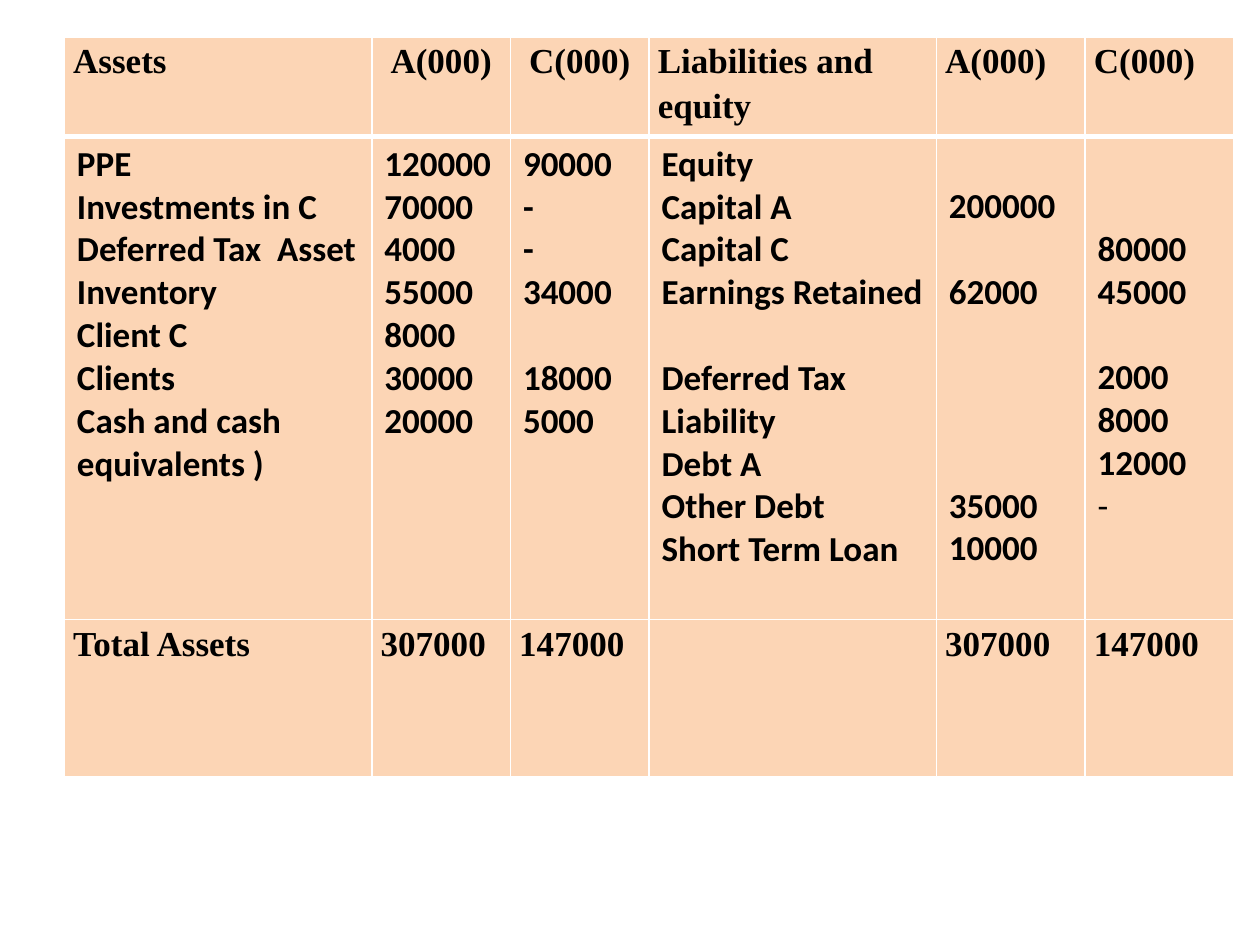
"""Build the balance sheet slide for companies A and C."""
from dataclasses import dataclass

from lxml.etree import SubElement
from pptx import Presentation
from pptx.dml.color import RGBColor
from pptx.enum.text import PP_ALIGN
from pptx.oxml.ns import qn
from pptx.table import _Cell
from pptx.util import Pt


@dataclass(frozen=True)
class Theme:
    """Colours, fonts and sizes in points."""
    fill: str = "FCD5B5"
    ink: str = "000000"
    rule: str = "FFFFFF"
    heading_font: str = "Times New Roman"
    body_font: str = "Calibri"
    size: float = 20
    body_line: float = 24.4
    thin: float = 1
    thick: float = 3


@dataclass(frozen=True)
class RowStyle:
    """Look of one table row, with lengths in points."""
    font: str
    height: float
    side_margin: float
    top_margin: float
    line_spacing: float
    top_rule: float
    bottom_rule: float


@dataclass(frozen=True)
class Entry:
    """Lines of one cell, where an empty line stands for a gap."""
    lines: tuple[str, ...] = ()
    align: PP_ALIGN = PP_ALIGN.LEFT


THEME = Theme()
HEADER = RowStyle(THEME.heading_font, 57, 5.04, 0, 1.15, THEME.thin, THEME.thick)
BODY = RowStyle(THEME.body_font, 276, 7.2, 3.6, 1, THEME.thick, THEME.thin)
TOTAL = RowStyle(THEME.heading_font, 90, 5.04, 0, 1.15, THEME.thin, THEME.thin)

LEFT, TOP = 36.8, 21
COLUMN_WIDTHS = (175.7, 79.2, 79.2, 164.2, 85, 85)
CENTER = PP_ALIGN.CENTER

ROWS = (
    (HEADER, (
        Entry(("Assets",)),
        Entry(("A(000)",), CENTER),
        Entry(("C(000)",), CENTER),
        Entry(("Liabilities and equity",)),
        Entry(("A(000)",)),
        Entry(("C(000)",)),
    )),
    (BODY, (
        Entry(("PPE", "Investments in C", "Deferred Tax  Asset", "Inventory",
               "Client C", "Clients", "Cash and cash equivalents )")),
        Entry(("120000", "70000", "4000", "55000", "8000", "30000", "20000")),
        Entry(("90000", "-", "-", "34000", "", "18000", "5000")),
        Entry(("Equity", "Capital A", "Capital C", "Earnings Retained", "",
               "Deferred Tax Liability", "Debt A", "Other Debt", "Short Term Loan")),
        Entry(("", "200000", "", "62000", "", "", "", "", "35000", "10000")),
        Entry(("", "", "80000", "45000", "", "2000", "8000", "12000", "-")),
    )),
    (TOTAL, (
        Entry(("Total Assets",)),
        Entry(("307000",)),
        Entry(("147000",)),
        Entry(),
        Entry(("307000",)),
        Entry(("147000",)),
    )),
)


def apply_format(target: object, values: dict[str, object]) -> None:
    """Set each named attribute on the target."""
    for name, value in values.items():
        setattr(target, name, value)


def draw_borders(cell: _Cell, style: RowStyle) -> None:
    """Rule the four sides of a cell."""
    properties = cell._tc.get_or_add_tcPr()
    widths = {"a:lnL": THEME.thin, "a:lnR": THEME.thin,
              "a:lnT": style.top_rule, "a:lnB": style.bottom_rule}
    for index, (tag, width) in enumerate(widths.items()):
        line = SubElement(properties, qn(tag), w=str(Pt(width)))
        SubElement(SubElement(line, qn("a:solidFill")), qn("a:srgbClr"), val=THEME.rule)
        properties.insert(index, line)


def write_lines(cell: _Cell, entry: Entry, style: RowStyle, bold_last: bool) -> None:
    """Write the lines, turning leading gaps into margin and others into spacing."""
    frame = cell.text_frame
    gap, started = 0, False
    for index, text in enumerate(entry.lines):
        if not text:
            gap += THEME.body_line
            continue
        para = frame.add_paragraph() if started else frame.paragraphs[0]
        if started:
            para.space_before = Pt(gap)
        else:
            cell.margin_top = Pt(style.top_margin + gap)
        gap, started = 0, True
        apply_format(para, {"alignment": entry.align, "line_spacing": style.line_spacing})
        span = para.add_run()
        span.text = text
        is_last = index == len(entry.lines) - 1
        apply_format(span.font, {"name": style.font, "size": Pt(THEME.size),
                                 "bold": bold_last or not is_last})
        span.font.color.rgb = RGBColor.from_string(THEME.ink)


def draw_cell(cell: _Cell, entry: Entry, style: RowStyle) -> None:
    """Fill, rule and write one cell."""
    apply_format(cell, {"margin_left": Pt(style.side_margin),
                        "margin_right": Pt(style.side_margin),
                        "margin_top": Pt(style.top_margin),
                        "margin_bottom": Pt(style.top_margin)})
    cell.fill.solid()
    cell.fill.fore_color.rgb = RGBColor.from_string(THEME.fill)
    draw_borders(cell, style)
    write_lines(cell, entry, style, bold_last=entry.lines[-2:] != ("12000", "-"))


def main() -> None:
    """Build and save the deck."""
    deck = Presentation()
    apply_format(deck, {"slide_width": Pt(720), "slide_height": Pt(540)})
    page = deck.slides.add_slide(deck.slide_layouts[6])
    height = sum(style.height for style, _ in ROWS)
    sheet = page.shapes.add_table(len(ROWS), len(COLUMN_WIDTHS), Pt(LEFT), Pt(TOP),
                                  Pt(sum(COLUMN_WIDTHS)), Pt(height)).table
    for column, width in zip(sheet.columns, COLUMN_WIDTHS):
        column.width = Pt(width)
    for row, (style, entries) in zip(sheet.rows, ROWS):
        row.height = Pt(style.height)
        for cell, entry in zip(row.cells, entries):
            draw_cell(cell, entry, style)
    deck.save("out.pptx")


if __name__ == "__main__":
    main()
